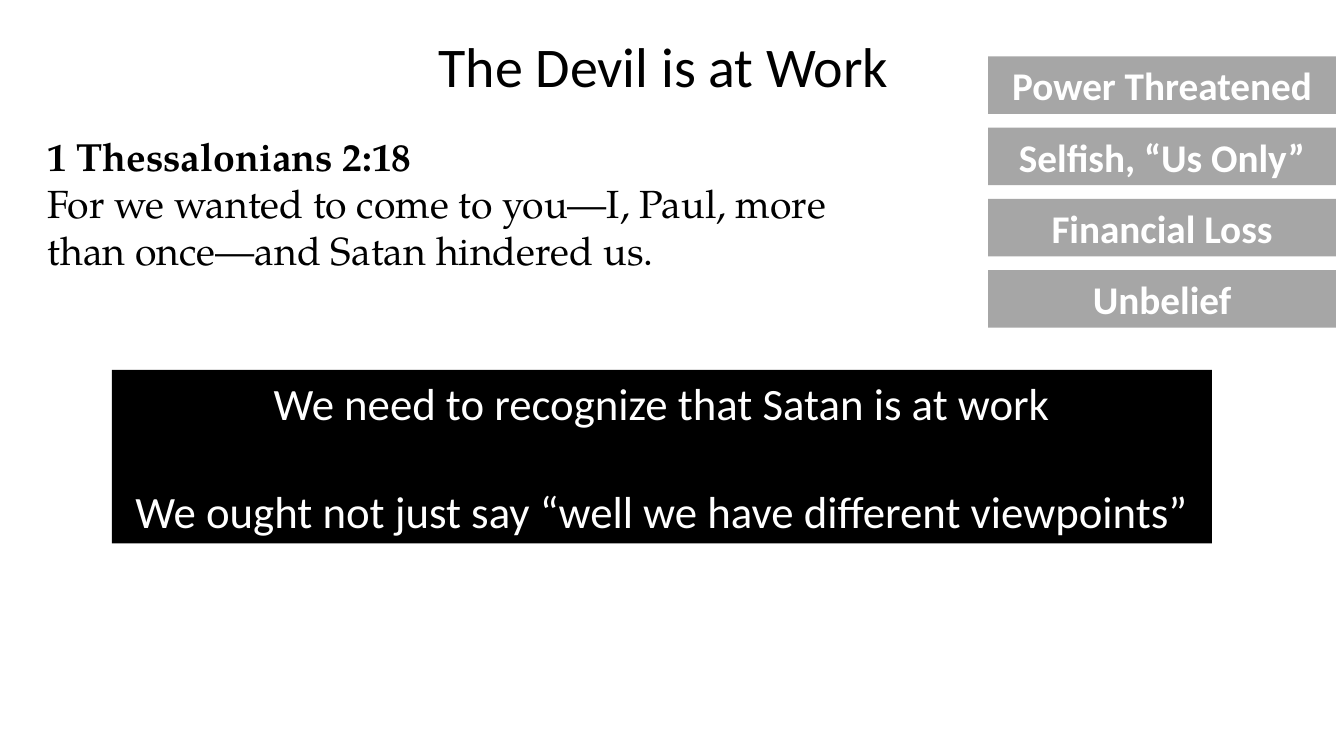
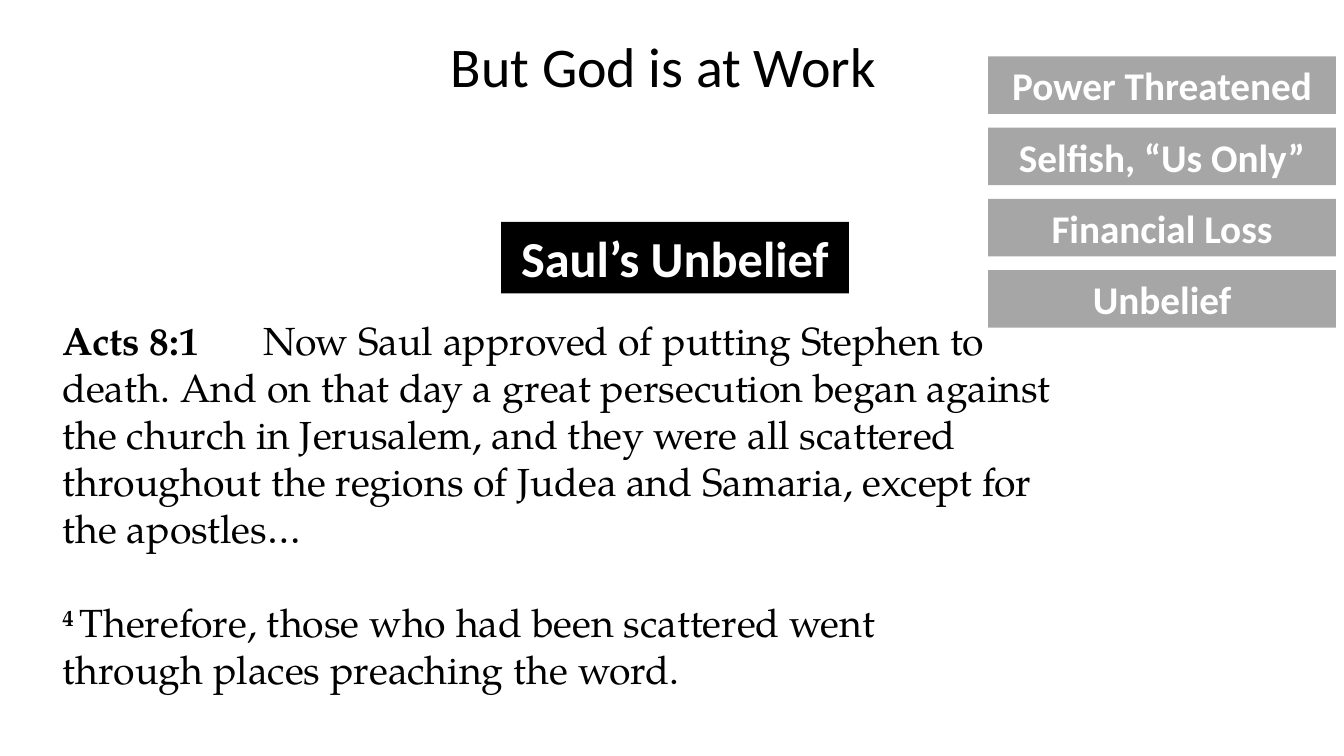
from pptx import Presentation, util as u
from pptx.dml.color import RGBColor
from pptx.enum import shapes, text

BLACK, WHITE, GRAY = "000000", "FFFFFF", "A6A6A6"
SANS, SERIF = "Calibri", "TeX Gyre Pagella"
TAGS = ["Power Threatened", "Selfish, “Us Only”", "Financial Loss", "Unbelief"]
TITLE_BOX = (3.14, 0.26, 6.88, 0.77)
TAG_BOX = (9.8, 0.56, 3.45, 2.69)
TAG_H = 0.57


def color(code):
    return RGBColor.from_string(code)


def inches(box):
    return [u.Inches(side) for side in box]


def write(par, words, size, face, ink, bold=False, raised=False):
    """Add a run for each line of words, with line breaks between."""
    for i, line in enumerate(words.split("\n")):
        if i:
            par.add_line_break()
        run = par.add_run()
        run.text = line
        font = run.font
        font.size, font.name, font.bold = u.Pt(size), face, bold
        font.color.rgb = color(ink)
        if raised:
            font._element.set("baseline", "30000")


def add_title(slide, words):
    title = slide.shapes.title
    title.left, title.top, title.width, title.height = inches(TITLE_BOX)
    par = title.text_frame.paragraphs[0]
    par.alignment = text.PP_ALIGN.CENTER
    write(par, words, 40, SANS, BLACK)


def add_band(slide, box, lines, fill, size, bold=False, gap=0):
    """Filled box with centred white lines, gap points apart."""
    band = slide.shapes.add_shape(shapes.MSO_SHAPE.RECTANGLE, *inches(box))
    band.shadow.inherit = False
    band.fill.solid()
    band.fill.fore_color.rgb = color(fill)
    band.line.fill.background()
    frame = band.text_frame
    frame.word_wrap = True
    frame.vertical_anchor = text.MSO_ANCHOR.MIDDLE
    for i, line in enumerate(lines):
        par = frame.add_paragraph() if i else frame.paragraphs[0]
        par.alignment = text.PP_ALIGN.CENTER
        par.space_before = u.Pt(gap if i else 0)
        write(par, line, size, SANS, WHITE, bold)


def add_tags(slide, box):
    left, top, width, height = box
    step = (height - TAG_H) / (len(TAGS) - 1)
    for i, tag in enumerate(TAGS):
        add_band(slide, (left, top + i * step, width, TAG_H), [tag], GRAY, 28, True)


def add_verse(slide, box, pars, gap=0):
    """Scripture text; each paragraph is a list of (words, bold, raised)."""
    frame = slide.shapes.add_textbox(*inches(box)).text_frame
    frame.word_wrap = True
    for i, runs in enumerate(pars):
        par = frame.add_paragraph() if i else frame.paragraphs[0]
        par.space_before = u.Pt(gap if i else 0)
        par._p.get_or_add_pPr().set("defTabSz", str(u.Inches(1)))
        for words, bold, raised in runs:
            write(par, words, 28, SERIF, BLACK, bold, raised)


def start_slide(deck, title):
    slide = deck.slides.add_slide(deck.slide_layouts[5])
    add_title(slide, title)
    add_tags(slide, TAG_BOX)
    return slide


def devil_slide(deck):
    slide = start_slide(deck, "The Devil is at Work")
    add_verse(slide, (0.37, 1.26, 8.27, 1.51), [
        [("1 Thessalonians 2:18", True, False)],
        [("For we wanted to come to you—I, Paul, more than once—and "
          "Satan hindered us.", False, False)],
    ])
    add_band(slide, (1.11, 3.67, 10.91, 1.72), [
        "We need to recognize that Satan is at work",
        "We ought not just say “well we have different viewpoints”",
    ], BLACK, 32, gap=38.5)


def god_slide(deck):
    slide = start_slide(deck, "But God is at Work")
    add_verse(slide, (0.52, 3.09, 10.06, 3.87), [
        [("Acts 8:1", True, False),
         ("\tNow Saul approved of putting Stephen to death. And on that day "
          "a great persecution began against the church in Jerusalem, and "
          "they were all scattered throughout the regions of Judea and "
          "Samaria, except for the apostles…", False, False)],
        [("4 ", True, True),
         ("Therefore, those who had been scattered went\n"
          "through places preaching the word.", False, False)],
    ], gap=33.5)
    add_band(slide, (4.97, 2.2, 3.45, 0.71), ["Saul’s Unbelief"], BLACK, 36, True)


def main():
    deck = Presentation()
    deck.slide_width, deck.slide_height = inches((13.33, 7.5))
    devil_slide(deck)
    god_slide(deck)
    deck.save("out.pptx")


if __name__ == "__main__":
    main()
